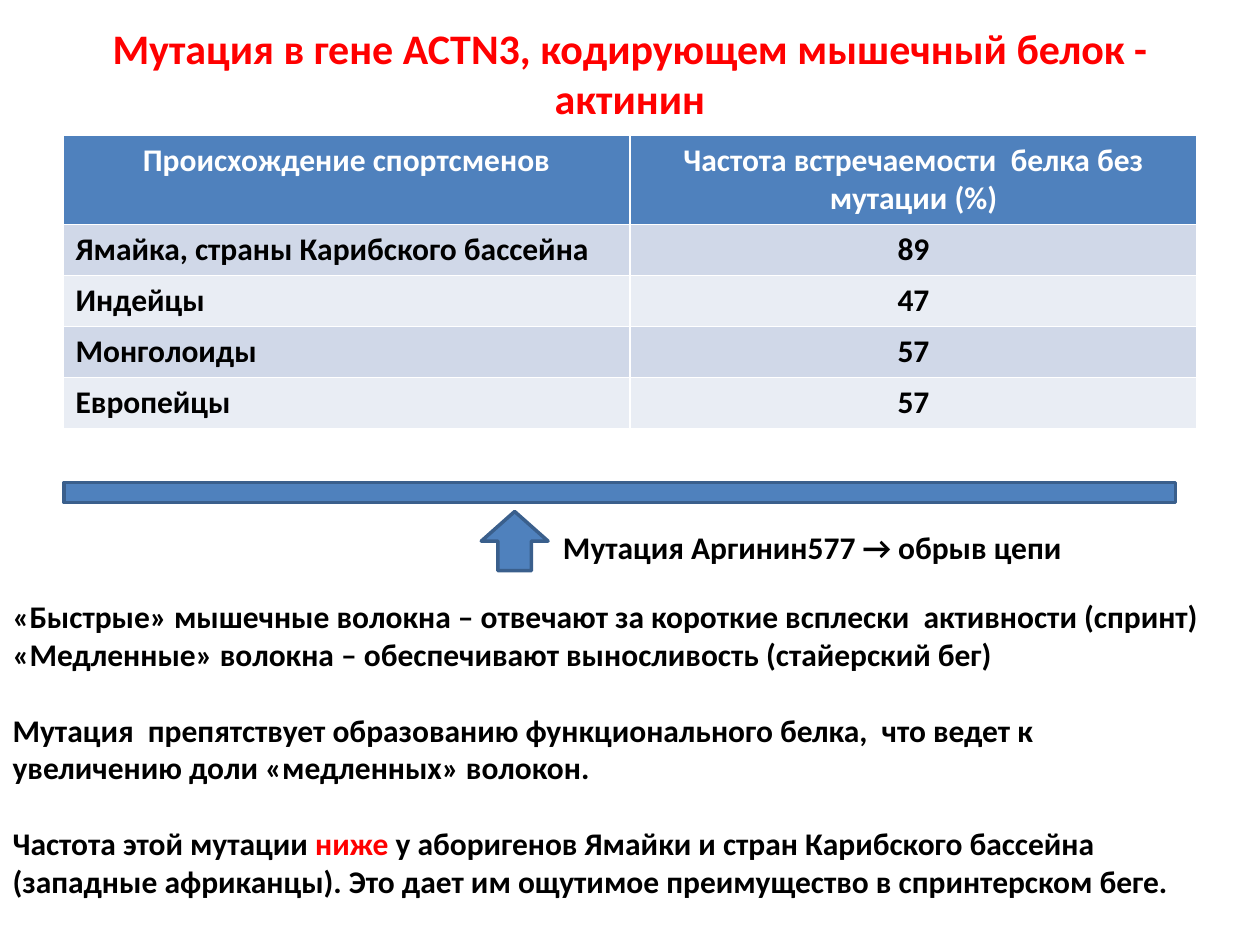
from lxml import etree
from pptx import Presentation
from pptx import util as u
from pptx.dml.color import RGBColor
from pptx.enum import shapes, text

theme = {
    "font": "Calibri", "head": 24, "body": 18,
    "red": "FF0000", "black": "000000", "white": "FFFFFF",
    "blue": "4F81BD", "edge": "3A5F8C", "bands": ("D0D8E8", "E9EDF4"),
}

deck = Presentation()
deck.slide_width, deck.slide_height = u.Inches(10), u.Inches(7.5)
cell = deck.slide_width // 100  # grid of 100 columns by 75 rows


def grid(*box):
    return [round(n * cell) for n in box]


def write(para, words, color="black", size="body"):
    run = para.add_run()
    run.text = words
    look = {"name": theme["font"], "size": u.Pt(theme[size]), "bold": True}
    for key, value in look.items():
        setattr(run.font, key, value)
    run.font.color.rgb = RGBColor.from_string(theme[color])


slide = deck.slides.add_slide(deck.slide_layouts[1])
title, body = slide.placeholders
spots = [(title, (5, 0, 90, 11.5)), (body, (0, 46.9, 96.5, 25.2))]
for holder, box in spots:
    holder.left, holder.top, holder.width, holder.height = grid(*box)

# Title
title.text_frame.vertical_anchor = text.MSO_ANCHOR.MIDDLE
para = title.text_frame.paragraphs[0]
para.alignment = text.PP_ALIGN.CENTER
write(para, "Мутация в гене ACTN3, кодирующем мышечный белок - актинин",
      "red", "head")

# Table of frequencies
rows = [
    ("Происхождение спортсменов",
     "Частота встречаемости  белка без мутации (%)"),
    ("Ямайка, страны Карибского бассейна", "89"),
    ("Индейцы", "47"),
    ("Монголоиды", "57"),
    ("Европейцы", "57"),
]
table = slide.shapes.add_table(len(rows), 2, *grid(5, 10.7, 90, 23.2)).table
for r, row in enumerate(rows):
    table.rows[r].height = grid(4.05 if r else 7)[0]
    fill = theme["bands"][(r - 1) % 2] if r else theme["blue"]
    for c, words in enumerate(row):
        box = table.cell(r, c)
        box.fill.solid()
        box.fill.fore_color.rgb = RGBColor.from_string(fill)
        para = box.text_frame.paragraphs[0]
        if c or not r:
            para.alignment = text.PP_ALIGN.CENTER
        write(para, words, "black" if r else "white")

# Protein chain and the arrow at the mutation
kinds = shapes.MSO_SHAPE
marks = {
    kinds.FLOWCHART_PROCESS: (5.1, 38.3, 88.2, 1.6),
    kinds.UP_ARROW: (38.2, 40.6, 5.3, 4.7),
}
for kind, box in marks.items():
    mark = slide.shapes.add_shape(kind, *grid(*box))
    mark.shadow.inherit = False
    mark.fill.solid()
    mark.fill.fore_color.rgb = RGBColor.from_string(theme["blue"])
    mark.line.color.rgb = RGBColor.from_string(theme["edge"])
    mark.line.width = u.Pt(2)

# Mutation label
label = slide.shapes.add_textbox(*grid(43.7, 41.4, 50.4, 4)).text_frame
label.word_wrap = True
write(label.paragraphs[0], "Мутация Аргинин577 → обрыв цепи")

# Explanation: gap above in points, then runs with their colours
notes = [
    (0, [("«Быстрые» мышечные волокна – отвечают за короткие всплески  "
          "активности (спринт)", "black")]),
    (0, [("«Медленные» волокна – обеспечивают выносливость "
          "(стайерский бег)", "black")]),
    (21.6, [("Мутация  препятствует образованию функционального белка,  "
             "что ведет к увеличению доли «медленных» волокон.", "black")]),
    (21.6, [("Частота этой мутации ", "black"), ("ниже", "red"),
            (" у аборигенов Ямайки и стран Карибского бассейна (западные "
             "африканцы). Это дает им ощутимое преимущество в "
             "спринтерском беге.", "black")]),
]
frame = body.text_frame
frame.auto_size = text.MSO_AUTO_SIZE.NONE
for i, (gap, runs) in enumerate(notes):
    para = frame.add_paragraph() if i else frame.paragraphs[0]
    para.space_before = u.Pt(gap)
    props = para._p.get_or_add_pPr()
    for key in ("marL", "indent"):
        props.set(key, "0")
    etree.SubElement(
        props, "{http://schemas.openxmlformats.org/drawingml/2006/main}buNone")
    for words, color in runs:
        write(para, words, color)

deck.save("out.pptx")
